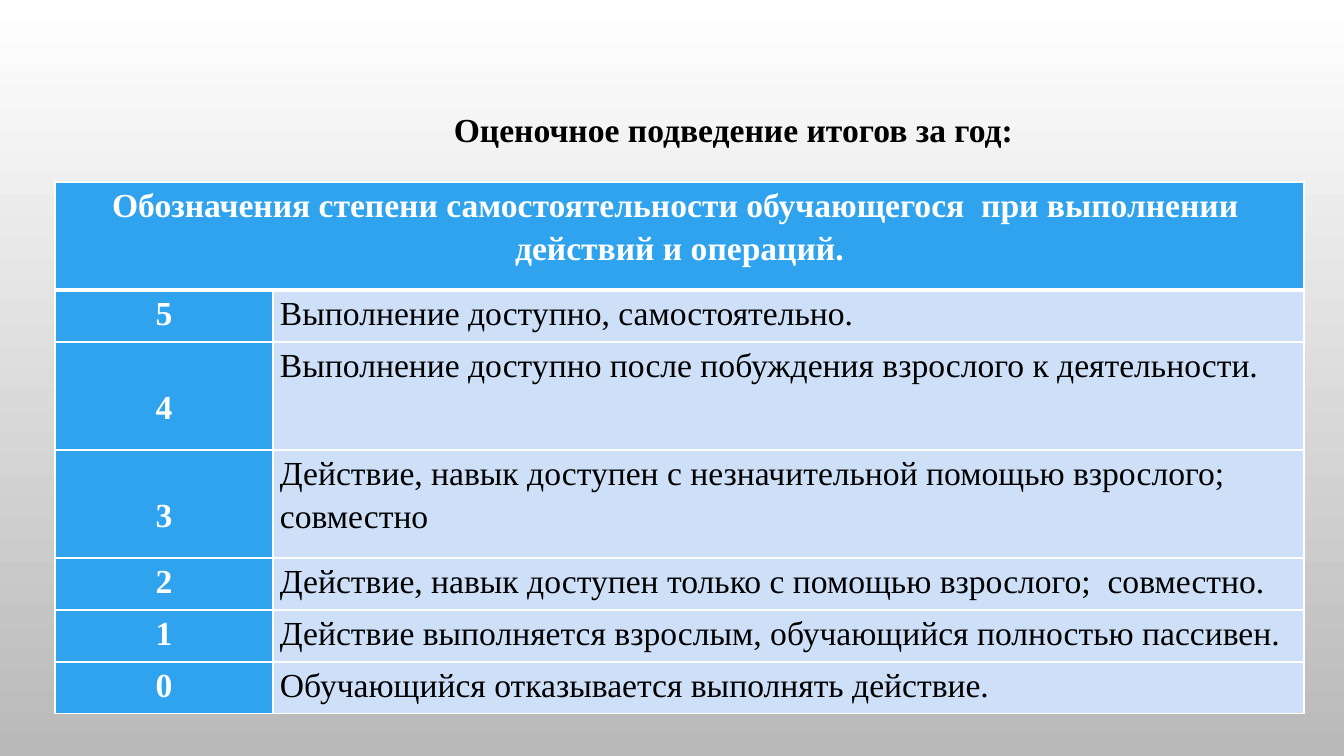
from lxml import etree
from pptx import Presentation
from pptx.dml.color import RGBColor
from pptx.enum.text import MSO_ANCHOR, MSO_AUTO_SIZE, PP_ALIGN
from pptx.oxml.ns import qn
from pptx.util import Pt

CENTER, LEFT = PP_ALIGN.CENTER, PP_ALIGN.LEFT
TOP, BOTTOM = MSO_ANCHOR.TOP, MSO_ANCHOR.BOTTOM
NO_AUTOFIT = MSO_AUTO_SIZE.NONE
PX = 12192000 / 1344  # EMU in one px

THEME = {
    "font": "Times New Roman",
    "size": 24,
    "dark": "000000",
    "light": "FFFFFF",
    "accent": "2FA3EE",
    "pale": "CDE0F8",
    "gradient": ("FFFFFF", "B9B9B9"),
}


def write_text(frame, text, color, bold=False, align=LEFT, spacing=1.15):
    paragraph = frame.paragraphs[0]
    paragraph.alignment = align
    paragraph.line_spacing = spacing
    run = paragraph.add_run()
    run.text = text
    run.font.name = THEME["font"]
    run.font.size = Pt(THEME["size"])
    run.font.bold = bold
    run.font.color.rgb = RGBColor.from_string(color)


def format_cell(cell, fill, top_width=1, bottom_width=1, margin_top=0):
    properties = cell._tc.get_or_add_tcPr()
    widths = {"a:lnL": 1, "a:lnR": 1, "a:lnT": top_width, "a:lnB": bottom_width}
    for side, width in widths.items():
        line = etree.SubElement(properties, qn(side), w=str(Pt(width)))
        solid = etree.SubElement(line, qn("a:solidFill"))
        etree.SubElement(solid, qn("a:srgbClr"), val=THEME["light"])
    cell.fill.solid()
    cell.fill.fore_color.rgb = RGBColor.from_string(fill)
    cell.margin_left = cell.margin_right = round(7 * PX)
    cell.margin_top, cell.margin_bottom = round(margin_top * PX), 0
    cell.vertical_anchor = TOP


presentation = Presentation()
presentation.slide_width = round(1344 * PX)
presentation.slide_height = round(756 * PX)
slide = presentation.slides.add_slide(presentation.slide_layouts[5])

# Background: white at the top, grey at the bottom
background = slide.background.fill
background.gradient()
background.gradient_angle = 270
for stop, color, position in zip(background.gradient_stops, THEME["gradient"], (0, 1)):
    stop.color.rgb = RGBColor.from_string(color)
    stop.position = position

# Title
title = slide.shapes.title
title.left, title.top, title.width, title.height = (
    round(length * PX) for length in (163, 75, 1141, 80))
title.text_frame.word_wrap = True
title.text_frame.auto_size = NO_AUTOFIT
title.text_frame.vertical_anchor = BOTTOM
write_text(title.text_frame, "Оценочное подведение итогов за год:", THEME["dark"],
           bold=True, align=CENTER, spacing=0.9)

# Grades: mark, meaning, row height, space above the mark
HEADER = ("Обозначения степени самостоятельности обучающегося  "
          "при выполнении  действий и операций.")
HEADER_HEIGHT = 108
GRADES = [
    ("5", "Выполнение доступно, самостоятельно.", 52, 0),
    ("4", "Выполнение доступно после побуждения взрослого к деятельности.", 108, 42),
    ("3", "Действие, навык доступен с незначительной помощью взрослого; совместно", 108, 42),
    ("2", "Действие, навык доступен только с помощью взрослого;  совместно.", 52, 0),
    ("1", "Действие выполняется взрослым, обучающийся полностью пассивен.", 52, 0),
    ("0", "Обучающийся отказывается выполнять действие.", 52, 0),
]
COLUMNS = (218, 1031)
heights = [HEADER_HEIGHT] + [grade[2] for grade in GRADES]

# Table frame
table = slide.shapes.add_table(
    len(heights), len(COLUMNS), round(55 * PX), round(182 * PX),
    round(sum(COLUMNS) * PX), round(sum(heights) * PX)).table
table.horz_banding = False
for column, width in zip(table.columns, COLUMNS):
    column.width = round(width * PX)
for row, height in zip(table.rows, heights):
    row.height = round(height * PX)

# Header row across both columns
header = table.cell(0, 0)
header.merge(table.cell(0, 1))
for column_index in range(len(COLUMNS)):
    format_cell(table.cell(0, column_index), THEME["accent"], bottom_width=3)
write_text(header.text_frame, HEADER, THEME["light"], bold=True, align=CENTER)

# Grade rows
for row_index, (mark, meaning, height, space_above) in enumerate(GRADES, start=1):
    top_width = 3 if row_index == 1 else 1
    mark_cell, meaning_cell = table.cell(row_index, 0), table.cell(row_index, 1)
    format_cell(mark_cell, THEME["accent"], top_width, margin_top=space_above)
    write_text(mark_cell.text_frame, mark, THEME["light"], bold=True, align=CENTER)
    format_cell(meaning_cell, THEME["pale"], top_width)
    write_text(meaning_cell.text_frame, meaning, THEME["dark"])

presentation.save("out.pptx")
